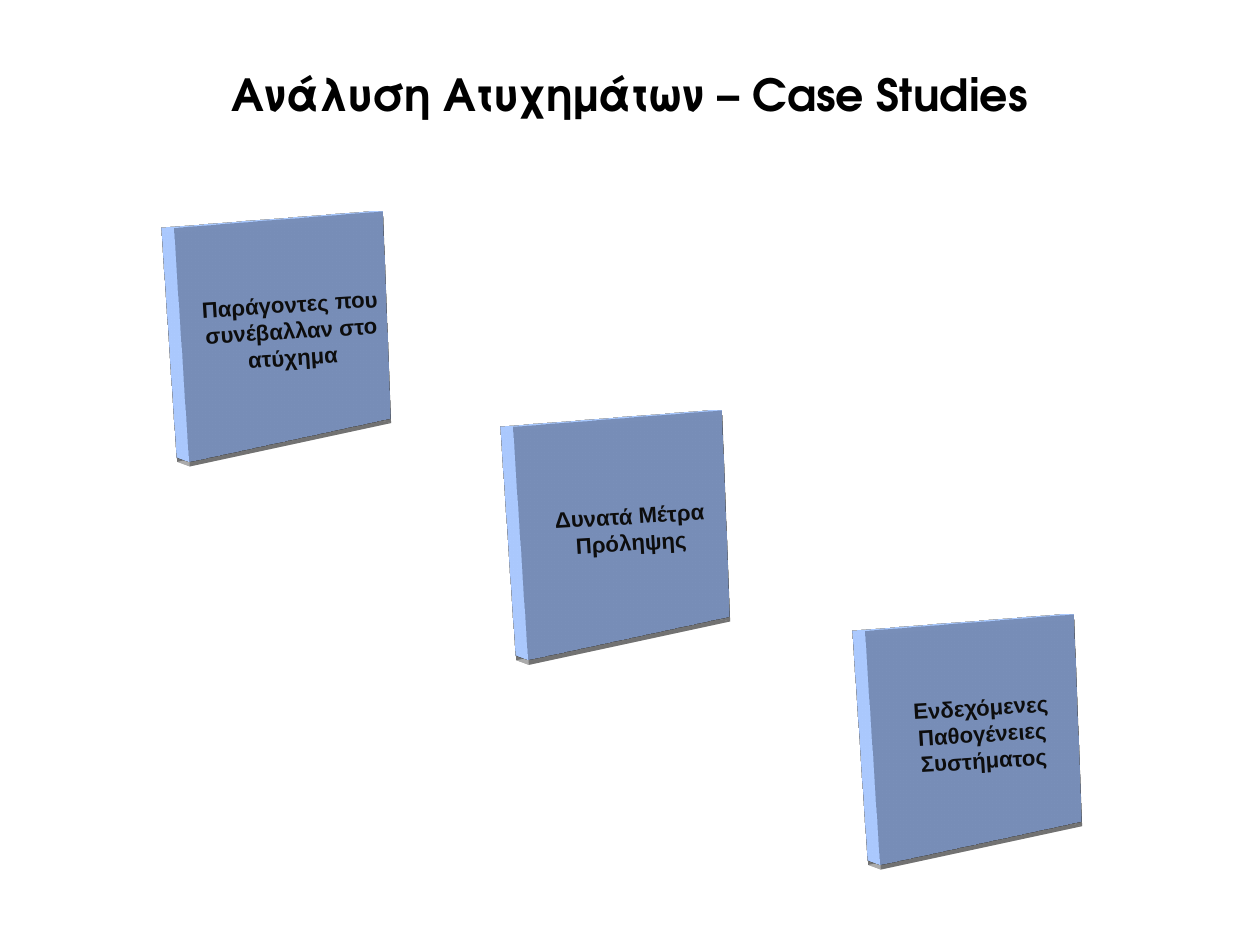
from pptx import Presentation, oxml
from pptx.dml.color import RGBColor
from pptx.enum import shapes, text
from pptx.oxml import ns
from pptx.util import Cm, Pt

COLOURS = {"title": "000000", "label": "0D0D0D", "tile": "8FAADC",
           "shadow": "000000", "contour": "FFFFFF"}
TITLE = "Ανάλυση Ατυχημάτων – Case Studies"
TITLE_BOX = (0.99, 0.71, 34.11, 4.17)
TITLE_FONT = {"name": "TeX Gyre Adventor", "size": Pt(36), "bold": True}
LABEL_FONT = {"name": "Arial", "size": Pt(18), "bold": True}
TILE_SIZE = (7.14, 6.35)
TILES = [
    ("Παράγοντες που συνέβαλλαν στο ατύχημα", 4.78, 6.3),
    ("Δυνατά Μέτρα Πρόληψης", 14.5, 11.99),
    ("Ενδεχόμενες Παθογένειες Συστήματος", 24.59, 17.86),
]
SHADOW = f"""<a:outerShdw {ns.nsdecls('a')} blurRad="225425" dist="50800" dir="5220000" algn="ctr">
  <a:srgbClr val="{COLOURS['shadow']}"><a:alpha val="33000"/></a:srgbClr></a:outerShdw>"""
SCENE = f"""<a:scene3d {ns.nsdecls('a')}>
  <a:camera prst="perspectiveFront" fov="3300000"><a:rot lat="486000" lon="19530000" rev="174000"/></a:camera>
  <a:lightRig rig="harsh" dir="t"><a:rot lat="0" lon="0" rev="3000000"/></a:lightRig></a:scene3d>"""
DEPTH = f"""<a:sp3d {ns.nsdecls('a')} extrusionH="254000" contourW="19050">
  <a:bevelT w="82550" h="44450" prst="angle"/><a:bevelB w="82550" h="44450" prst="angle"/>
  <a:contourClr><a:srgbClr val="{COLOURS['contour']}"/></a:contourClr></a:sp3d>"""


def write_text(shape, wording, font_values, colour):
    """Fill a shape with one centred, formatted paragraph."""
    frame = shape.text_frame
    frame.text = wording
    frame.word_wrap = True
    frame.vertical_anchor = text.MSO_ANCHOR.MIDDLE
    paragraph = frame.paragraphs[0]
    paragraph.alignment = text.PP_ALIGN.CENTER
    font = paragraph.runs[0].font
    for name, value in font_values.items():
        setattr(font, name, value)
    font.color.rgb = RGBColor.from_string(COLOURS[colour])
    return paragraph


def place_title(slide, box):
    """Move and format the title placeholder within the given box."""
    title = slide.shapes.title
    for name, value in zip(("left", "top", "width", "height"), box):
        setattr(title, name, Cm(value))
    write_text(title, TITLE, TITLE_FONT, "title").line_spacing = 0.9


def add_tile(slide, label, box):
    """Add a labelled slab in perspective within the given box."""
    tile = slide.shapes.add_shape(
        shapes.MSO_SHAPE.FLOWCHART_PROCESS, *(Cm(value) for value in box))
    tile.fill.solid()
    tile.fill.fore_color.rgb = RGBColor.from_string(COLOURS["tile"])
    tile.line.fill.background()
    tile.shadow.inherit = False
    properties = tile.element.spPr
    properties.find(ns.qn("a:effectLst")).append(oxml.parse_xml(SHADOW))
    for markup in (SCENE, DEPTH):
        properties.append(oxml.parse_xml(markup))
    write_text(tile, label, LABEL_FONT, "label")


def main():
    """Build the slide and save it."""
    presentation = Presentation()
    presentation.slide_width = Cm(36.12)
    presentation.slide_height = Cm(27.1)
    slide = presentation.slides.add_slide(presentation.slide_layouts[5])
    place_title(slide, TITLE_BOX)
    for label, left, top in TILES:
        add_tile(slide, label, (left, top, *TILE_SIZE))
    presentation.save("out.pptx")


if __name__ == "__main__":
    main()
